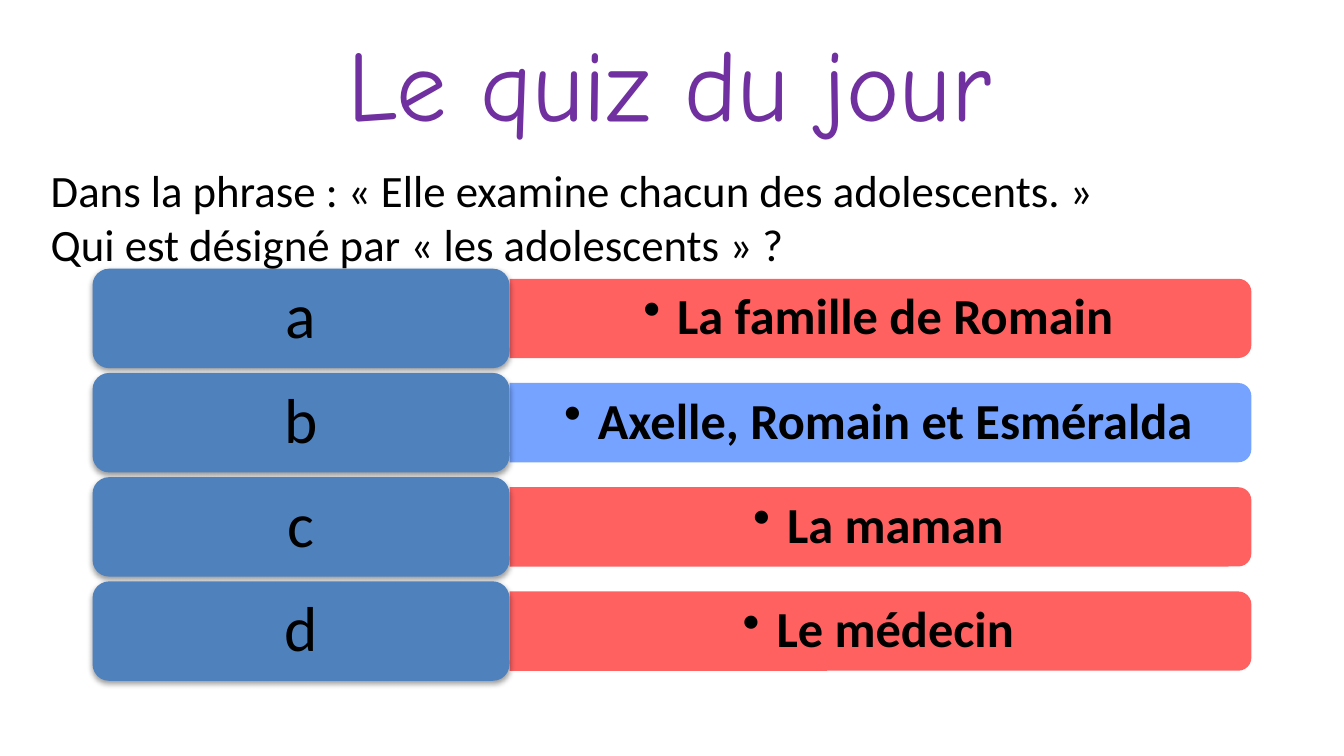
"""Build the slide of the daily quiz with its four answers."""
from dataclasses import dataclass

from lxml import etree
from pptx import Presentation
from pptx.dml.color import RGBColor
from pptx.enum.shapes import MSO_SHAPE
from pptx.enum.text import MSO_ANCHOR, MSO_AUTO_SIZE, PP_ALIGN
from pptx.oxml.ns import qn
from pptx.util import Cm, Pt

ROUNDED = MSO_SHAPE.ROUNDED_RECTANGLE
ROUNDED_END = MSO_SHAPE.ROUND_2_SAME_RECTANGLE
MIDDLE, TOP = MSO_ANCHOR.MIDDLE, MSO_ANCHOR.TOP
CENTER, LEFT = PP_ALIGN.CENTER, PP_ALIGN.LEFT
NO_FIT = MSO_AUTO_SIZE.NONE
TITLE_ONLY = 5


@dataclass(frozen=True)
class Theme:
    title_font: str = "Comic Neue"
    body_font: str = "Calibri"
    title: str = "7030A0"
    text: str = "000000"
    letter: str = "4F81BD"
    red: str = "FF5050"
    blue: str = "6699FF"
    title_size: int = 54
    question_size: int = 24
    answer_size: int = 27
    letter_size: int = 34


def write(frame, *lines, size, color, font, bold=False, align=LEFT,
          anchor=TOP, spacing=None, bullet=False, wrap=True):
    frame.word_wrap = wrap
    frame.auto_size = NO_FIT
    frame.vertical_anchor = anchor
    for index, line in enumerate(lines):
        paragraph = frame.add_paragraph() if index else frame.paragraphs[0]
        paragraph.alignment = align
        paragraph.line_spacing = spacing
        run = paragraph.add_run()
        run.text = line
        run.font.name = font
        run.font.size = Pt(size)
        run.font.bold = bold
        run.font.color.rgb = RGBColor.from_string(color)
        if bullet:
            paragraph.level = 1
            properties = paragraph._p.get_or_add_pPr()
            properties.set("marL", str(Cm(0.64)))
            properties.set("indent", str(-Cm(0.64)))
            etree.SubElement(properties, qn("a:buChar"), char="•")


class QuizSlide:
    def __init__(self, slide, theme):
        self.slide = slide
        self.theme = theme

    def title(self, text, left, top, width, height):
        heading = self.slide.shapes.title
        heading.left, heading.top = Cm(left), Cm(top)
        heading.width, heading.height = Cm(width), Cm(height)
        write(heading.text_frame, text, size=self.theme.title_size,
              color=self.theme.title, font=self.theme.title_font,
              align=CENTER, anchor=MIDDLE)

    def text_box(self, lines, left, top, width, height, **style):
        box = self.slide.shapes.add_textbox(
            Cm(left), Cm(top), Cm(width), Cm(height))
        write(box.text_frame, *lines, color=self.theme.text,
              font=self.theme.body_font, **style)

    def block(self, preset, left, top, width, height, color):
        block = self.slide.shapes.add_shape(
            preset, Cm(left), Cm(top), Cm(width), Cm(height))
        block.shadow.inherit = False
        block.fill.solid()
        block.fill.fore_color.rgb = RGBColor.from_string(color)
        block.line.fill.background()
        return block

    def answer(self, text, left, middle, width, height, color):
        bar = self.block(ROUNDED_END, left + (width - height) / 2,
                         middle - width / 2, height, width, color)
        bar.rotation = 90
        shade = bar._element.spPr.find(
            f"{qn('a:solidFill')}/{qn('a:srgbClr')}")
        etree.SubElement(shade, qn("a:alpha"), val="90000")
        self.text_box([text], left, middle - height / 2, width - 0.08, height,
                      size=self.theme.answer_size, bold=True, align=CENTER,
                      anchor=MIDDLE, spacing=0.9, bullet=True)

    def letter(self, text, left, middle, width, height):
        label = self.block(ROUNDED, left, middle - height / 2, width, height,
                           self.theme.letter)
        effects = label._element.spPr.find(qn("a:effectLst"))
        shadow = etree.SubElement(
            effects, qn("a:outerShdw"), blurRad=str(Pt(3.1)),
            dist=str(Pt(1.6)), dir="5400000", rotWithShape="0")
        shade = etree.SubElement(shadow, qn("a:srgbClr"), val=self.theme.text)
        etree.SubElement(shade, qn("a:alpha"), val="38000")
        write(label.text_frame, text, size=self.theme.letter_size,
              color=self.theme.text, font=self.theme.body_font,
              align=CENTER, anchor=MIDDLE, spacing=0.9)


def main():
    deck = Presentation()
    deck.slide_width, deck.slide_height = Cm(25.4), Cm(14.29)
    theme = Theme()
    quiz = QuizSlide(
        deck.slides.add_slide(deck.slide_layouts[TITLE_ONLY]), theme)
    quiz.title("Le quiz du jour", 1.7, 0.53, 21.9, 2)

    answers = [
        ("a", "La famille de Romain", theme.red),
        ("b", "Axelle, Romain et Esméralda", theme.blue),
        ("c", "La maman", theme.red),
        ("d", "Le médecin", theme.red),
    ]
    letter_left, letter_width = 1.75, 7.88
    first_middle, row_pitch = 6.02, 1.97
    for row, (letter, answer, color) in enumerate(answers):
        middle = first_middle + row * row_pitch
        quiz.answer(answer, letter_left + letter_width, middle, 14.02, 1.5,
                    color)
        quiz.letter(letter, letter_left, middle, letter_width, 1.88)

    question = ["Dans la phrase : « Elle examine chacun des adolescents. »",
                "Qui est désigné par « les adolescents » ?"]
    quiz.text_box(question, 0.71, 2.95, 20.4, 2.31,
                  size=theme.question_size, wrap=False)
    deck.save("out.pptx")


if __name__ == "__main__":
    main()
